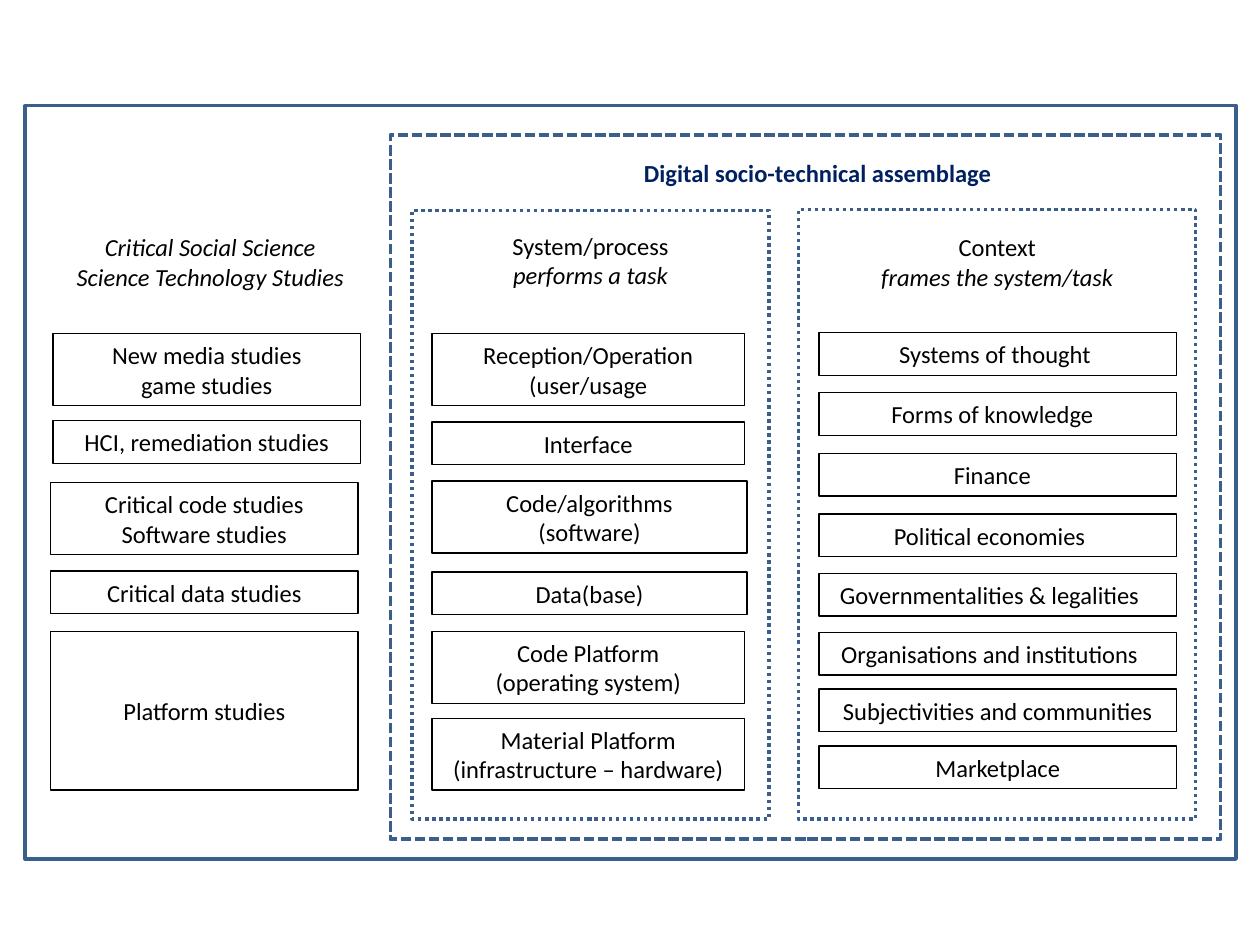
from pptx import Presentation
from pptx.dml.color import RGBColor
from pptx.enum.dml import MSO_LINE as Dash
from pptx.enum.shapes import MSO_SHAPE as Shape
from pptx.enum.text import MSO_ANCHOR as Anchor, PP_ALIGN as Align
from pptx.util import Cm, Pt

BLACK, NAVY, BLUE = "000000", "002060", "3A5F8C"
ONE, TWO = 0.86, 1.45  # heights of one-line and two-line boxes


def draw_box(place, color=None, width=0.75, dash=None):
    """Add an unfilled rectangle, or a plain text box when no color is given."""
    place = [Cm(n) for n in place]
    if color is None:
        return slide.shapes.add_textbox(*place)
    box = slide.shapes.add_shape(Shape.RECTANGLE, *place)
    box.shadow.inherit = False
    box.fill.background()
    box.line.color.rgb = RGBColor.from_string(color)
    box.line.width = Pt(width)
    if dash:
        box.line.dash_style = dash
    return box


def set_text(box, text, color=BLACK, bold=False, slant=()):
    """Write centred text; slant holds the indexes of the italic lines."""
    frame = box.text_frame
    frame.text = text
    frame.word_wrap = True
    frame.vertical_anchor = Anchor.MIDDLE
    for i, line in enumerate(frame.paragraphs):
        line.alignment = Align.CENTER
        for run in line.runs:
            font = run.font
            font.name, font.size, font.bold = "Calibri", Pt(14), bold
            font.italic = i in slant
            font.color.rgb = RGBColor.from_string(color)


deck = Presentation()
deck.slide_width, deck.slide_height = Cm(25.4), Cm(19.05)
slide = deck.slides.add_slide(deck.slide_layouts[6])

# Frames
frames = [
    ((0.51, 2.13, 24.41, 15.19), None),
    ((7.87, 2.72, 16.74, 14.2), Dash.SQUARE_DOT),
    ((8.31, 4.24, 7.19, 12.27), Dash.ROUND_DOT),
    ((16.1, 4.22, 8, 12.29), Dash.ROUND_DOT),
]
for place, dash in frames:
    draw_box(place, BLUE, 2, dash)

# Headings
title = draw_box((12.7, 3.05, 7.57, ONE))
set_text(title, "Digital socio-technical assemblage", NAVY, bold=True)
heads = [
    (1.14, 4.55, 6.2, "Critical Social Science\nScience Technology Studies", (0, 1)),
    (8.31, 4.52, 7.19, "System/process\nperforms a task", (1,)),
    (16.31, 4.55, 7.59, "Context\nframes the system/task", (1,)),
]
for left, top, width, text, slant in heads:
    set_text(draw_box((left, top, width, TWO)), text, slant=slant)

# Fields of study and system layers: left, width, then top, height, text
groups = [
    (1.07, 6.2, [
        (6.73, TWO, "New media studies\ngame studies"),
        (8.48, ONE, "HCI, remediation studies"),
    ]),
    (1.02, 6.2, [
        (9.73, TWO, "Critical code studies\nSoftware studies"),
        (11.51, ONE, "Critical data studies"),
        (12.73, 3.2, "Platform studies"),
    ]),
    (8.71, 6.3, [
        (6.73, TWO, "Reception/Operation (user/usage"),
        (8.51, ONE, "Interface"),
        (12.73, TWO, "Code Platform\n(operating system)"),
        (14.48, TWO, "Material Platform\n(infrastructure – hardware)"),
    ]),
    (8.71, 6.35, [
        (9.7, TWO, "Code/algorithms\n(software)"),
        (11.53, ONE, "Data(base)"),
    ]),
]
for left, width, rows in groups:
    for top, height, text in rows:
        set_text(draw_box((left, top, width, height), BLACK), text)

# Context: top, extra right margin, text
context = [
    (6.71, 0.11, "Systems of thought"),
    (7.92, 0.22, "Forms of knowledge"),
    (9.14, 0.22, "Finance"),
    (10.36, 0.33, "Political economies"),
    (11.56, 0.33, "Governmentalities & legalities"),
    (12.75, 0.33, "Organisations and institutions"),
    (13.89, 0, "Subjectivities and communities"),
    (15.04, 0, "Marketplace"),
]
for top, extra, text in context:
    box = draw_box((16.51, top, 7.21, ONE), BLACK)
    set_text(box, text)
    box.text_frame.margin_right = Cm(0.25 + extra)

deck.save("out.pptx")
